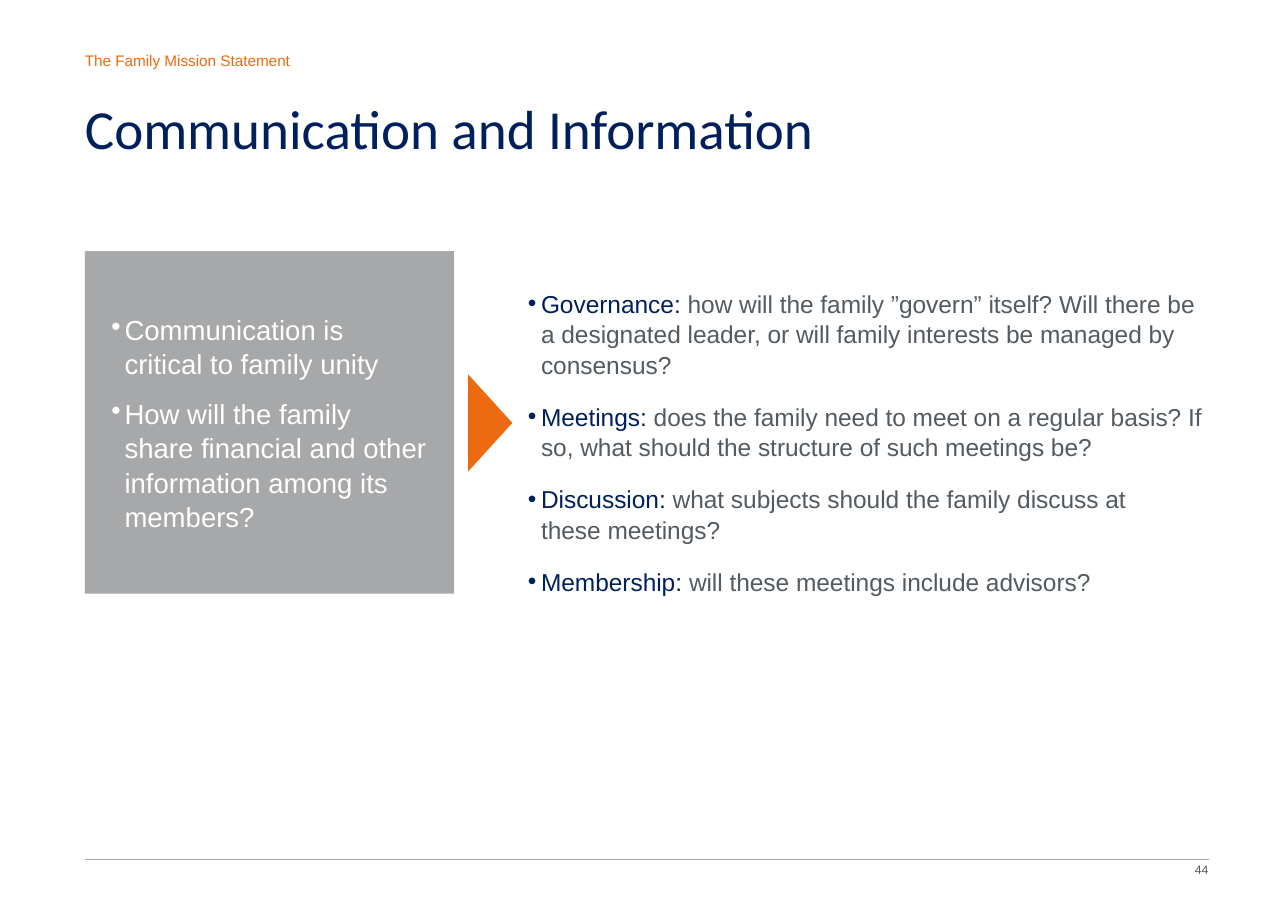
"""Builds the Communication and Information slide."""
from dataclasses import dataclass

from lxml import etree
from pptx import Presentation
from pptx import util as u
from pptx.dml import color
from pptx.enum import shapes, text
from pptx.oxml import ns

COLORS = {"navy": "00205B", "orange": "EC6B10", "slate": "535B61",
          "grey": "A7A8AA", "white": "FFFFFF"}
WIDTH, HEIGHT = u.Inches(11.69), u.Inches(8.27)
MARGIN, RIGHT, RULE = 6.59, 93.84, 94.32
INDENT = u.Inches(0.12)


@dataclass(frozen=True)
class Box:
    """Area in percent of the slide's width and height."""
    left: float
    top: float
    width: float
    height: float

    def emu(self) -> tuple:
        return (across(self.left), down(self.top),
                across(self.width), down(self.height))


@dataclass(frozen=True)
class Style:
    """Look of a block of text."""
    size: float
    font: str = "Arial"
    spacing: object = 1.0
    before: float = 0
    bullet: bool = False
    align: object = text.PP_ALIGN.LEFT


def across(share: float) -> int:
    return round(WIDTH * share / 100)


def down(share: float) -> int:
    return round(HEIGHT * share / 100)


def rgb(name: str) -> color.RGBColor:
    return color.RGBColor.from_string(COLORS[name])


def place(sp, box: Box) -> None:
    sp.left, sp.top, sp.width, sp.height = box.emu()


def add_bullet(p) -> None:
    pPr = p._p.get_or_add_pPr()
    pPr.set("marL", str(INDENT))
    pPr.set("indent", str(-INDENT))
    etree.SubElement(pPr, ns.qn("a:buChar")).set("char", "•")


def write(tf, paragraphs: list, style: Style, inset: tuple = (0, 0),
          anchor=text.MSO_ANCHOR.TOP) -> None:
    """Fill a frame with paragraphs made of (text, colour) runs."""
    tf.word_wrap = True
    tf.auto_size = text.MSO_AUTO_SIZE.NONE
    tf.vertical_anchor = anchor
    tf.margin_left = tf.margin_right = u.Inches(inset[0])
    tf.margin_top = tf.margin_bottom = u.Inches(inset[1])
    for i, runs in enumerate(paragraphs):
        p = tf.add_paragraph() if i else tf.paragraphs[0]
        if style.bullet:
            add_bullet(p)
        p.alignment = style.align
        p.line_spacing = style.spacing
        p.space_before = u.Pt(style.before if i else 0)
        for words, tint in runs:
            for n, line in enumerate(words.split("\n")):
                if n:
                    p.add_line_break()
                r = p.add_run()
                r.text = line
                r.font.name = style.font
                r.font.size = u.Pt(style.size)
                r.font.color.rgb = rgb(tint)


def add_label(s, box: Box, words: str, tint: str, style: Style) -> None:
    write(s.shapes.add_textbox(*box.emu()).text_frame, [[(words, tint)]], style)


def add_block(s, kind, box: Box, tint: str):
    sp = s.shapes.add_shape(kind, *box.emu())
    sp.shadow.inherit = False
    sp.fill.solid()
    sp.fill.fore_color.rgb = rgb(tint)
    sp.line.fill.background()
    return sp


def add_rule(s) -> None:
    rule = s.shapes.add_connector(shapes.MSO_CONNECTOR.STRAIGHT, across(MARGIN),
                                  down(RULE), across(RIGHT), down(RULE))
    rule.line.color.rgb = rgb("grey")
    rule.line.width = u.Pt(0.35)
    etree.SubElement(rule._element.spPr, ns.qn("a:effectLst"))


TOPICS = [
    ("Governance: ", "how will the family ”govern” itself? Will there be a designated "
     "leader, or will family interests be managed by consensus?"),
    ("Meetings: ", "does the family need to meet on a regular basis? If so, what "
     "should the structure of such meetings be?"),
    ("Discussion: ", "what subjects should the family discuss at \nthese meetings?"),
    ("Membership: ", "will these meetings include advisors?"),
]
KEY_POINTS = [
    "Communication is critical to family unity",
    "How will the family share financial and other information among its members?",
]


def main() -> None:
    prs = Presentation()
    prs.slide_width, prs.slide_height = WIDTH, HEIGHT
    s = prs.slides.add_slide(prs.slide_layouts[1])
    title, body = s.placeholders

    add_rule(s)
    add_label(s, Box(80.24, 94.68, RIGHT - 80.24, 1.57), "44", "slate",
              Style(8, align=text.PP_ALIGN.RIGHT))
    add_label(s, Box(MARGIN, 5.8, 28.66, 2.3), "The Family Mission Statement",
              "orange", Style(10, spacing=0.9))

    place(title, Box(MARGIN, 10.88, 79.81, 6.29))
    write(title.text_frame, [[("Communication and Information", "navy")]],
          Style(36, font="Calibri", spacing=u.Pt(40)))

    place(body, Box(40.98, 31.56, 53.04, 29.75))
    write(body.text_frame, [[(topic, "navy"), (question, "slate")]
                            for topic, question in TOPICS],
          Style(16, spacing=1.04, before=14, bullet=True))

    panel = add_block(s, shapes.MSO_SHAPE.RECTANGLE,
                      Box(MARGIN, 27.57, 28.66, 37.61), "grey")
    write(panel.text_frame, [[(point, "white")] for point in KEY_POINTS],
          Style(18, spacing=1.04, before=10, bullet=True), (0.24, 0.12),
          text.MSO_ANCHOR.MIDDLE)

    arrow = add_block(s, shapes.MSO_SHAPE.ISOSCELES_TRIANGLE,
                      Box(34.3, 44.01, 7.53, 4.84), "orange")
    arrow.rotation = 90
    prs.save("out.pptx")


if __name__ == "__main__":
    main()
